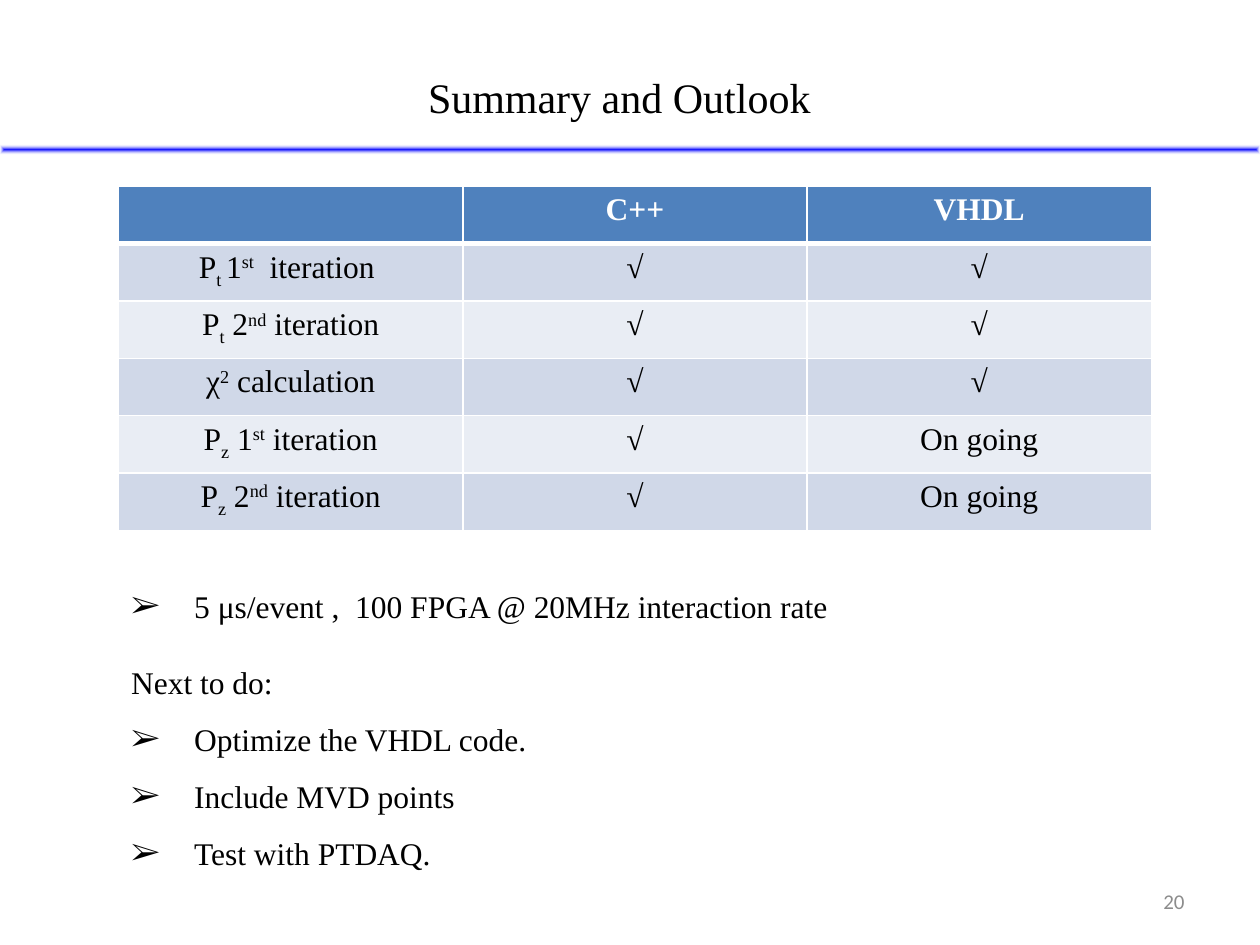
from dataclasses import dataclass

from lxml.etree import SubElement
from pptx import Presentation
from pptx.dml.color import RGBColor
from pptx.enum.shapes import MSO_SHAPE
from pptx.enum.text import MSO_ANCHOR, MSO_AUTO_SIZE, PP_ALIGN
from pptx.oxml import parse_xml
from pptx.oxml.ns import nsdecls, qn
from pptx.util import Cm, Pt


@dataclass(frozen=True)
class Theme:
    """Colours, fonts and type sizes of the slide."""
    serif: str = "Times New Roman"
    sans: str = "Calibri"
    title: int = 24
    body: int = 18
    small: int = 12
    ink: str = "000000"
    paper: str = "FFFFFF"
    grey: str = "8C8C8C"
    blue: str = "0000FF"
    header: str = "4F81BD"
    bands: tuple = ("D0D8E8", "E9EDF4")


T = Theme()
SUB, SUP = -25, 30
DONE, ONGOING = "√", "On going"
HEADINGS = ("", "C++", "VHDL")
STEPS = (
    ((("P", 0), ("t ", SUB), ("1", 0), ("st", SUP), ("  iteration ", 0)), DONE, DONE),
    ((("P", 0), ("t", SUB), (" 2", 0), ("nd", SUP), (" iteration", 0)), DONE, DONE),
    ((("χ", 0), ("2", SUP), (" calculation", 0)), DONE, DONE),
    ((("P", 0), ("z", SUB), (" 1", 0), ("st", SUP), (" iteration", 0)), DONE, ONGOING),
    ((("P", 0), ("z", SUB), (" 2", 0), ("nd", SUP), (" iteration", 0)), DONE, ONGOING),
)
RESULT = "5 μs/event ,  100 FPGA @ 20MHz interaction rate"
TASKS = ("Optimize the VHDL code.", "Include MVD points", "Test with PTDAQ.")


def put_text(p, text, size=T.body, font=T.serif, color=T.ink, bold=False,
             align=PP_ALIGN.LEFT, before=0, spacing=1.0):
    """Write a string, or (string, baseline) pairs, into a paragraph."""
    p.alignment, p.space_before, p.line_spacing = align, Pt(before), spacing
    for part, baseline in ((text, 0),) if isinstance(text, str) else text:
        r = p.add_run()
        r.text = part
        r.font.name, r.font.size, r.font.bold = font, Pt(size), bold
        r.font.color.rgb = RGBColor.from_string(color)
        if baseline:
            r._r.get_or_add_rPr().set("baseline", str(baseline * 1000))


def place(sp, box):
    """Move a shape to a box of left, top, width and height."""
    sp.left, sp.top, sp.width, sp.height = box


def set_bullet(p, char=None):
    """Give a paragraph a hanging indent and a bullet or none."""
    pPr = p._p.get_or_add_pPr()
    pPr.set("marL", str(Cm(1.27)))
    pPr.set("indent", str(-Cm(1.27)))
    if char:
        SubElement(pPr, qn("a:buFont"), typeface=T.serif)
        SubElement(pPr, qn("a:buChar"), char=char)
    else:
        SubElement(pPr, qn("a:buNone"))


def set_borders(cell, **widths):
    """Draw white cell borders with widths in points by side."""
    tcPr = cell._tc.get_or_add_tcPr()
    for side, width in widths.items():
        ln = SubElement(tcPr, qn(f"a:ln{side}"), w=str(Pt(width)))
        SubElement(SubElement(ln, qn("a:solidFill")), qn("a:srgbClr"), val=T.paper)


def add_title(s, box):
    """Set the slide title on one centred line."""
    sp = s.shapes.title
    place(sp, box)
    tf = sp.text_frame
    tf.word_wrap, tf.auto_size = False, MSO_AUTO_SIZE.NONE
    put_text(tf.paragraphs[0], "Summary and Outlook", size=T.title, align=PP_ALIGN.CENTER)


def add_rule(s, box):
    """Add a bar that fades from its centre to clear edges."""
    sp = s.shapes.add_shape(MSO_SHAPE.RECTANGLE, *box)
    sp.shadow.inherit = False
    sp.line.fill.background()
    sp._element.spPr.find(qn("a:prstGeom")).addnext(parse_xml(
        f'<a:gradFill {nsdecls("a")} rotWithShape="1"><a:gsLst>'
        f'<a:gs pos="0"><a:srgbClr val="{T.blue}"/></a:gs>'
        f'<a:gs pos="100000"><a:srgbClr val="{T.paper}"><a:alpha val="0"/></a:srgbClr></a:gs>'
        '</a:gsLst><a:path path="shape">'
        '<a:fillToRect l="50000" t="50000" r="50000" b="50000"/></a:path></a:gradFill>'))


def add_status_table(s, box):
    """Add the table of steps and their state in each language."""
    rows = (HEADINGS, *STEPS)
    table = s.shapes.add_table(len(rows), len(HEADINGS), *box).table
    for i, row in enumerate(rows):
        head = i == 0
        fill = T.header if head else T.bands[(i - 1) % 2]
        for j, text in enumerate(row):
            cell = table.cell(i, j)
            set_borders(cell, L=1, R=1, T=3 if i == 1 else 1, B=3 if head else 1)
            cell.fill.solid()
            cell.fill.fore_color.rgb = RGBColor.from_string(fill)
            if text:
                put_text(cell.text_frame.paragraphs[0], text, bold=head,
                         color=T.paper if head else T.ink, align=PP_ALIGN.CENTER)


def add_outlook(s, box):
    """Fill the body with the result and the list of next tasks."""
    sp = s.placeholders[1]
    place(sp, box)
    tf = sp.text_frame
    tf.auto_size = MSO_AUTO_SIZE.NONE
    lines = [(RESULT, "➢", {}), ("Next to do:", None, {"before": 22})]
    lines += [(task, "➢", {"spacing": 1.5}) for task in TASKS]
    for i, (text, char, style) in enumerate(lines):
        p = tf.add_paragraph() if i else tf.paragraphs[0]
        set_bullet(p, char)
        put_text(p, text, **style)


def add_page_number(s, box):
    """Add the page number at the right of its box."""
    tf = s.shapes.add_textbox(*box).text_frame
    tf.word_wrap, tf.vertical_anchor = True, MSO_ANCHOR.MIDDLE
    put_text(tf.paragraphs[0], "20", size=T.small, font=T.sans, color=T.grey,
             align=PP_ALIGN.RIGHT)


def main():
    """Build the slide and save it."""
    prs = Presentation()
    prs.slide_width, prs.slide_height = Cm(25.4), Cm(19.05)
    s = prs.slides.add_slide(prs.slide_layouts[1])
    left = Cm(2.39)
    add_page_number(s, (Cm(18.21), Cm(17.65), Cm(5.92), Cm(1.02)))
    add_rule(s, (0, Cm(2.92), prs.slide_width, Cm(0.2)))
    add_title(s, (Cm(8.33), Cm(1.3), Cm(8.31), Cm(1.3)))
    add_outlook(s, (left, Cm(11.71), Cm(17.27), Cm(6.02)))
    add_status_table(s, (left, Cm(3.76), Cm(20.82), Cm(6.93)))
    prs.save("out.pptx")


if __name__ == "__main__":
    main()
